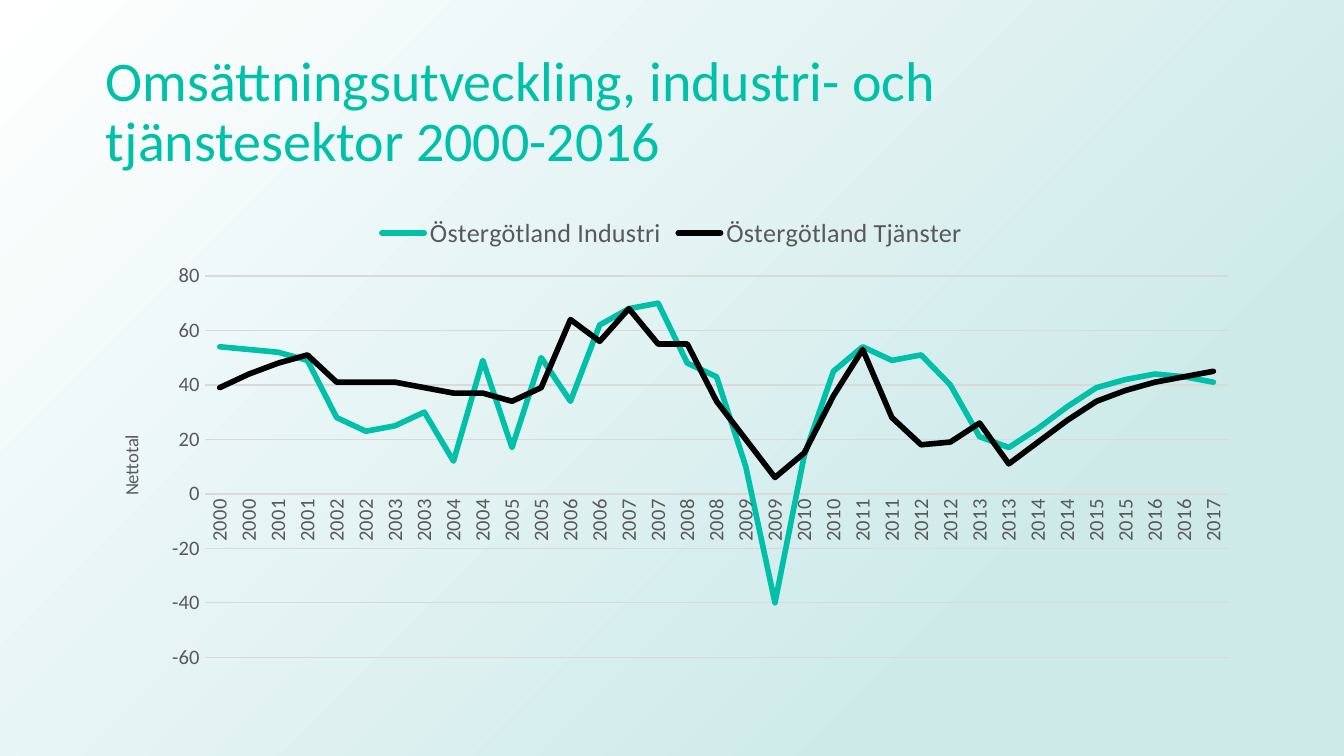
from lxml import etree
from pptx import Presentation, util as u
from pptx.chart.data import CategoryChartData
from pptx.dml.color import RGBColor
from pptx.enum import chart as ch, shapes, text
from pptx.oxml import parse_xml
from pptx.oxml.ns import nsdecls, qn

THEME = {
    "font": "Calibri", "teal": "00C0A9", "black": "000000", "label": "595959",
    "rule": "D9D9D9", "mist": "CDEAE9", "white": "FFFFFF",
    "title": 30, "legend": 14, "axis": 11, "axis_title": 10,
}
WIDTH = u.Inches(10)
HEIGHT = WIDTH * 9 // 16
LEFT, SPAN = int(WIDTH * 0.069), int(WIDTH * 0.862)

turnover = {
    "Östergötland Industri": ("teal", [
        54, 53, 52, 49, 28, 23, 25, 30, 12, 49, 17, 50, 34, 62, 68, 70, 48, 43,
        10, -40, 14, 45, 54, 49, 51, 40, 21, 17, 24, 32, 39, 42, 44, 43, 41]),
    "Östergötland Tjänster": ("black", [
        39, 44, 48, 51, 41, 41, 41, 39, 37, 37, 34, 39, 64, 56, 68, 55, 55, 34,
        20, 6, 15, 36, 53, 28, 18, 19, 26, 11, 19, 27, 34, 38, 41, 43, 45]),
}
half_years = [str(2000 + i // 2) for i in range(35)]


def style(font, size, color):
    values = {"name": THEME["font"], "size": u.Pt(THEME[size]), "bold": False}
    for key, value in values.items():
        setattr(font, key, value)
    font.color.rgb = RGBColor.from_string(THEME[color])


def place(element, **shares):
    """Fix a chart part at shares of the chart's width and height."""
    for old in element.findall(qn("c:layout")):
        element.remove(old)
    layout = parse_xml(f"<c:layout {nsdecls('c')}><c:manualLayout/></c:layout>")
    for tag, value in shares.items():
        etree.SubElement(layout[0], qn(f"c:{tag}")).set("val", str(value))
    # In an axis title the layout follows the text; in a plot area it is first.
    element.insert(1 if element.tag == qn("c:title") else 0, layout)


prs = Presentation()
prs.slide_width, prs.slide_height = WIDTH, HEIGHT
slide = prs.slides.add_slide(prs.slide_layouts[6])

# Background
backdrop = slide.shapes.add_shape(shapes.MSO_SHAPE.RECTANGLE, 0, 0, WIDTH, HEIGHT)
backdrop.shadow.inherit = False
backdrop.line.fill.background()
backdrop.fill.gradient()
for stop, (position, color) in zip(backdrop.fill.gradient_stops, [(0.23, "mist"), (1, "white")]):
    stop.position = position
    stop.color.rgb = RGBColor.from_string(THEME[color])
gradient = backdrop.fill._xPr.find(qn("a:gradFill"))
gradient.replace(gradient.find(qn("a:lin")), parse_xml(
    f'<a:path {nsdecls("a")} path="circle"><a:fillToRect l="100000" t="100000"/></a:path>'))

# Heading
heading = slide.shapes.add_textbox(LEFT, int(HEIGHT * 0.053), SPAN, int(HEIGHT * 0.194)).text_frame
heading.word_wrap = True
heading.vertical_anchor = text.MSO_ANCHOR.MIDDLE
paragraph = heading.paragraphs[0]
paragraph.line_spacing = 0.9
run = paragraph.add_run()
run.text = "Omsättningsutveckling, industri- och tjänstesektor 2000-2016"
style(run.font, "title", "teal")

# Turnover chart
data = CategoryChartData(number_format="0")
data.categories = half_years
for name, (_, balances) in turnover.items():
    data.add_series(name, balances)
chart = slide.shapes.add_chart(
    ch.XL_CHART_TYPE.LINE, LEFT, int(HEIGHT * 0.267), SPAN, int(HEIGHT * 0.633), data).chart
style(chart.font, "axis_title", "black")
chart.has_title = False
chart.has_legend = True
chart.legend.position = ch.XL_LEGEND_POSITION.TOP
chart.legend.include_in_layout = False
style(chart.legend.font, "legend", "label")

plot = chart.plots[0]
plot.vary_by_categories = False
for series, (color, _) in zip(plot.series, turnover.values()):
    series.smooth = False
    series.marker.style = ch.XL_MARKER_STYLE.NONE
    series.format.line.width = u.Pt(3)
    series.format.line.color.rgb = RGBColor.from_string(THEME[color])
    series._element.find(qn("c:spPr")).find(qn("a:ln")).set("cap", "rnd")

years, balance = chart.category_axis, chart.value_axis
for axis in (years, balance):
    axis.major_tick_mark = axis.minor_tick_mark = ch.XL_TICK_MARK.NONE
    style(axis.tick_labels.font, "axis", "label")
balance_format = {"minimum_scale": -60, "maximum_scale": 80, "major_unit": 20,
                  "has_major_gridlines": True, "has_title": True}
for key, value in balance_format.items():
    setattr(balance, key, value)
balance.tick_labels.number_format = "0"
balance.tick_labels.number_format_is_linked = False
balance.format.line.fill.background()
for rule in (years.format.line, balance.major_gridlines.format.line):
    rule.width = u.Pt(0.75)
    rule.color.rgb = RGBColor.from_string(THEME["rule"])
years._element.find(qn("c:txPr")).find(qn("a:bodyPr")).set("rot", "-5400000")

unit = balance.axis_title.text_frame
unit.text = "Nettotal"
style(unit.paragraphs[0].runs[0].font, "axis_title", "label")
unit._txBody.find(qn("a:bodyPr")).set("rot", "-5400000")
place(balance.axis_title._element, xMode="edge", yMode="edge", x=0.02, y=0.48)
place(chart._chartSpace.chart.plotArea, layoutTarget="inner", xMode="edge", yMode="edge",
      x=0.097, y=0.155, w=0.883, h=0.797)

prs.save("out.pptx")
